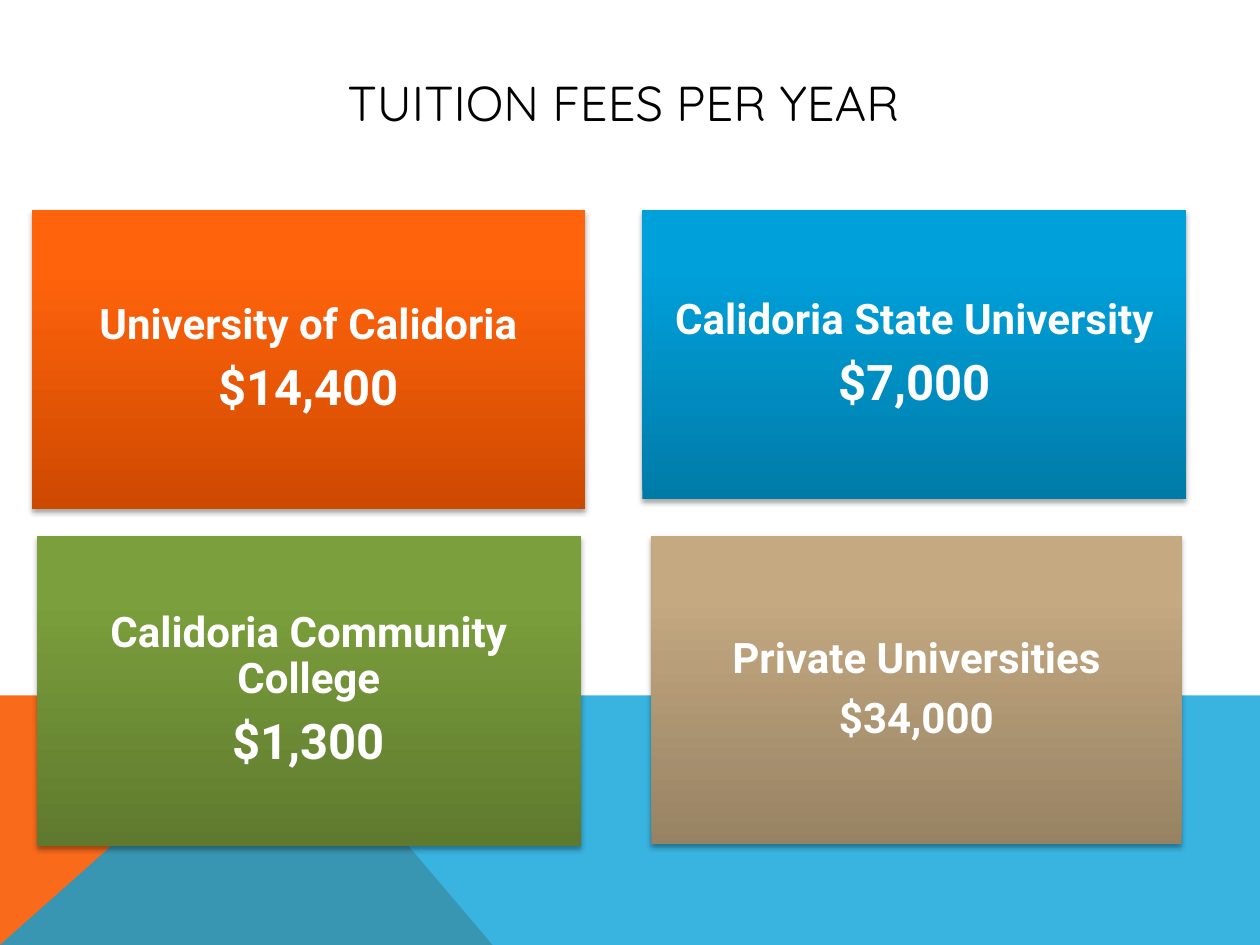
from dataclasses import dataclass

from lxml.etree import SubElement
from pptx import Presentation
from pptx.dml.color import RGBColor
from pptx.enum.shapes import MSO_SHAPE
from pptx.enum.text import MSO_ANCHOR, PP_ALIGN
from pptx.oxml.ns import qn
from pptx.util import Cm, Pt


@dataclass(frozen=True)
class Theme:
    ink: str = "000000"
    white: str = "FFFFFF"
    wedge: str = "F96A1B"
    band: str = "08A1D9"
    head: str = "Quicksand"
    body: str = "Roboto"
    small: int = 24
    large: int = 28


@dataclass(frozen=True)
class Card:
    name: str
    fee: str
    size: int
    left: float
    top: float
    width: float
    height: float
    tones: tuple[str, str, str]  # bottom, upper, top edge


THEME = Theme()
WIDE, HIGH = 25.4, 19.05
ROWS = 4.24, 10.8
CARDS = (
    Card("University of Calidoria", "$14,400", THEME.large,
         0.64, ROWS[0], 11.15, 6.02, ("CE4900", "FF630C", "FF640E")),
    Card("Calidoria State University", "$7,000", THEME.large,
         12.95, ROWS[0], 10.97, 5.82, ("007BA8", "00A0DA", "00A0DB")),
    Card("Calidoria Community College", "$1,300", THEME.large,
         0.74, ROWS[1], 10.97, 6.25, ("5F7A2E", "7B9F3C", "7CA13B")),
    Card("Private Universities", "$34,000", THEME.small,
         13.13, ROWS[1], 10.69, 6.22, ("978263", "C4A981", "C6AA80")),
)


def node(root, tag: str, **attrs):
    return SubElement(root, qn(tag), {k: str(v) for k, v in attrs.items()})


def tint(root, color: str, alpha: int = 100) -> None:
    item = node(root, "a:srgbClr", val=color)
    if alpha < 100:
        node(item, "a:alpha", val=alpha * 1000)


def write(para, text: str, *, size: int, font: str, color: str,
          bold: bool = False, line: float = 1.0, after: float = 0) -> None:
    para.alignment = PP_ALIGN.CENTER
    para.line_spacing = line
    para.space_after = Pt(after)
    run = para.add_run()
    run.text = text
    run.font.size, run.font.name, run.font.bold = Pt(size), font, bold
    run.font.color.rgb = RGBColor.from_string(color)


def shade(shape, tones: tuple[str, str, str]) -> None:
    """Fill from the bottom up, and cast a soft shadow downwards."""
    shape.line.fill.background()
    shape.fill.gradient()
    shape.fill.gradient_angle = 90
    stops = shape._element.spPr.find(qn("a:gradFill")).find(qn("a:gsLst"))
    for stop in list(stops):
        stops.remove(stop)
    for spot, tone in zip((0, 80, 100), tones):
        tint(node(stops, "a:gs", pos=spot * 1000), tone)
    shape.shadow.inherit = False
    glow = shape._element.spPr.find(qn("a:effectLst"))
    cast = node(glow, "a:outerShdw", blurRad=Pt(3.1), dist=Pt(1.8),
                dir=90 * 60000, rotWithShape=0)
    tint(cast, THEME.ink, 35)


def draw_band(slide, spots: list[tuple[float, float]], color: str,
              alpha: int = 100) -> None:
    first, *rest = [(Cm(x), Cm(y)) for x, y in spots]
    form = slide.shapes.build_freeform(*first)
    form.add_line_segments(rest, close=True)
    shape = form.convert_to_shape()
    shape.shadow.inherit = False
    shape.line.fill.background()
    shape.fill.solid()
    shape.fill.fore_color.rgb = RGBColor.from_string(color)
    if alpha < 100:
        fill = shape._element.spPr.find(qn("a:solidFill"))
        node(fill[0], "a:alpha", val=alpha * 1000)


def draw_card(slide, card: Card) -> None:
    shape = slide.shapes.add_shape(
        MSO_SHAPE.RECTANGLE, Cm(card.left), Cm(card.top),
        Cm(card.width), Cm(card.height))
    shade(shape, card.tones)
    frame = shape.text_frame
    frame.word_wrap = True
    frame.vertical_anchor = MSO_ANCHOR.MIDDLE
    frame.margin_left = frame.margin_right = Cm(0.25)
    frame.margin_top = frame.margin_bottom = Cm(0.25)
    lines = (card.name, THEME.small), (card.fee, card.size)
    for spot, (text, size) in enumerate(lines):
        para = frame.add_paragraph() if spot else frame.paragraphs[0]
        write(para, text, size=size, font=THEME.body, color=THEME.white,
              bold=True, line=0.9, after=round(0.35 * size, 1))


def main() -> None:
    deck = Presentation()
    deck.slide_width, deck.slide_height = Cm(WIDE), Cm(HIGH)
    slide = deck.slides.add_slide(deck.slide_layouts[6])

    # Bands along the foot
    edge, peak = 14.02, 5.66
    draw_band(slide, [(0, HIGH), (0, edge), (peak, edge), (9.93, HIGH)],
              THEME.wedge)
    draw_band(slide, [(0, HIGH), (peak, edge), (WIDE, edge), (WIDE, HIGH)],
              THEME.band, 80)

    # Title
    box = slide.shapes.add_textbox(0, Cm(1.07), Cm(WIDE), Cm(1.98))
    box.text_frame.word_wrap = True
    box.text_frame.vertical_anchor = MSO_ANCHOR.MIDDLE
    write(box.text_frame.paragraphs[0], "TUITION FEES PER YEAR ",
          size=THEME.large, font=THEME.head, color=THEME.ink)

    # Fee cards
    for card in CARDS:
        draw_card(slide, card)

    deck.save("out.pptx")


if __name__ == "__main__":
    main()
